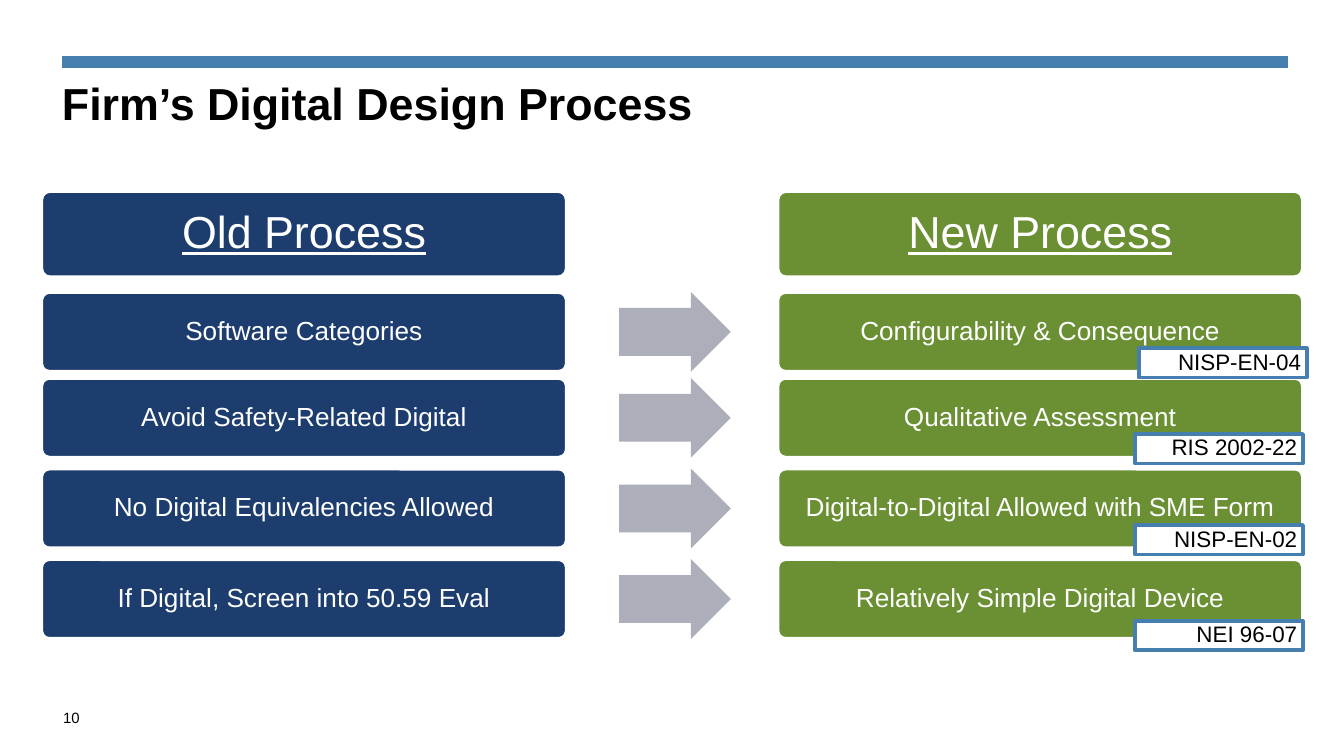
from lxml.etree import SubElement
from pptx import Presentation
from pptx.dml.color import RGBColor
from pptx.enum.shapes import MSO_CONNECTOR, MSO_SHAPE
from pptx.enum.text import MSO_ANCHOR, MSO_AUTO_SIZE, PP_ALIGN
from pptx.oxml.ns import qn
from pptx.util import Pt

BLUE = RGBColor(0x45, 0x7E, 0xAF)
NAVY = RGBColor(0x1C, 0x3D, 0x6E)
GREEN = RGBColor(0x6A, 0x90, 0x33)
GRAY = RGBColor(0xAC, 0xAF, 0xBA)
WHITE = RGBColor(0xFF, 0xFF, 0xFF)
BLACK = RGBColor(0, 0, 0)

# Table of rows: top, old step, new step, guide, guide offset (x, y) in the new card
ROWS = [
    (156.5, "Software Categories", "Configurability & Consequence",
     "NISP-EN-04", (193.6, 30)),
    (202.5, "Avoid Safety-Related Digital", "Qualitative Assessment",
     "RIS 2002-22", (191.5, 30)),
    (251.1, "No Digital Equivalencies Allowed",
     "Digital-to-Digital Allowed with SME Form", "NISP-EN-02", (191.5, 30.2)),
    (299.6, "If Digital, Screen into 50.59 Eval",
     "Relatively Simple Digital Device", "NEI 96-07", (191.5, 33)),
]
LEFT, WIDE = 22.1, 675.9
CARD, ARROW, SHIFT = 281.5, 59.8, 309.6
HEAD, STEP = 46.3, 42.7


def write(shape, text, size=14, color=WHITE, align=PP_ALIGN.CENTER,
          anchor=MSO_ANCHOR.MIDDLE, inset=(4, 4, 4, 4), space=0.9,
          bold=False, under=False):
    frame = shape.text_frame
    frame.word_wrap = True
    frame.auto_size = MSO_AUTO_SIZE.NONE
    frame.vertical_anchor = anchor
    (frame.margin_left, frame.margin_top,
     frame.margin_right, frame.margin_bottom) = map(Pt, inset)
    para = frame.paragraphs[0]
    para.alignment = align
    para.line_spacing = space
    run = para.add_run()
    run.text = text
    font = run.font
    font.name, font.size, font.bold = "Arial", Pt(size), bold
    font.underline = under
    font.color.rgb = color


def draw(slide, kind, box, fill, line=None):
    shape = slide.shapes.add_shape(kind, *map(Pt, box))
    shape.shadow.inherit = False
    shape.fill.solid()
    shape.fill.fore_color.rgb = fill
    if line is None:
        shape.line.fill.background()
    else:
        shape.line.color.rgb = line
        shape.line.width = Pt(2)
    return shape


def card(slide, box, fill, text, **style):
    shape = draw(slide, MSO_SHAPE.ROUNDED_RECTANGLE, box, fill, WHITE)
    shape.adjustments[0] = 0.1
    write(shape, text, **style)


def pair(slide, box, old, new, **style):
    """Old card at the left edge of the box, new card at its right edge."""
    x, y, w, h = box
    card(slide, (x, y, CARD, h), NAVY, old, **style)
    card(slide, (x + w - CARD, y, CARD, h), GREEN, new, **style)


def step(slide, box, old, new):
    """A pair of cards with an arrow between them."""
    pair(slide, box, old, new)
    x, y, _, h = box
    arrow = draw(slide, MSO_SHAPE.RIGHT_ARROW, (x + SHIFT, y, ARROW, h), GRAY)
    arrow.adjustments[0] = 0.6
    arrow.adjustments[1] = 0.5


def guide(slide, box, text):
    tag = draw(slide, MSO_SHAPE.RECTANGLE, box, WHITE, BLUE)
    write(tag, text, size=12, color=BLACK, align=PP_ALIGN.RIGHT,
          inset=(3, 1, 3, 1))


def header(slide, box, text):
    """Rule along the top of the box, title below it."""
    x, y, w, h = box
    rule = slide.shapes.add_connector(
        MSO_CONNECTOR.STRAIGHT, Pt(x), Pt(y), Pt(x + w), Pt(y))
    rule.line.color.rgb = BLUE
    rule.line.width = Pt(6.25)
    SubElement(rule._element.spPr, qn("a:effectLst"))
    title = slide.shapes.title
    title.left, title.top = Pt(x), Pt(y + 10.8)
    title.width, title.height = Pt(w), Pt(h - 10.8)
    write(title, text, size=24, color=BLACK, align=PP_ALIGN.LEFT,
          anchor=MSO_ANCHOR.TOP, inset=(0, 0, 7.2, 3.6), bold=True)


def footer(slide, box, text):
    label = slide.shapes.add_textbox(*map(Pt, box))
    write(label, text, size=8, color=BLACK, align=PP_ALIGN.LEFT,
          inset=(0, 3.6, 0, 3.6), space=1)


def main():
    deck = Presentation()
    deck.slide_width, deck.slide_height = Pt(720), Pt(405)
    slide = deck.slides.add_slide(deck.slide_layouts[5])

    # Title and page number
    header(slide, (33.2, 33.2, 656.8, 50.4), "Firm’s Digital Design Process")
    footer(slide, (33.8, 375.2, 28.8, 18), "10")

    # Column heads and steps
    pair(slide, (LEFT, 102.3, WIDE, HEAD), "Old Process", "New Process",
         size=24, under=True)
    for top, old, new, _, _ in ROWS:
        step(slide, (LEFT, top, WIDE, STEP), old, new)

    # Guide tags lie over the new cards
    for top, _, _, name, (dx, dy) in ROWS:
        guide(slide, (LEFT + WIDE - CARD + dx, top + dy, 90, 15.8), name)

    deck.save("out.pptx")


if __name__ == "__main__":
    main()
